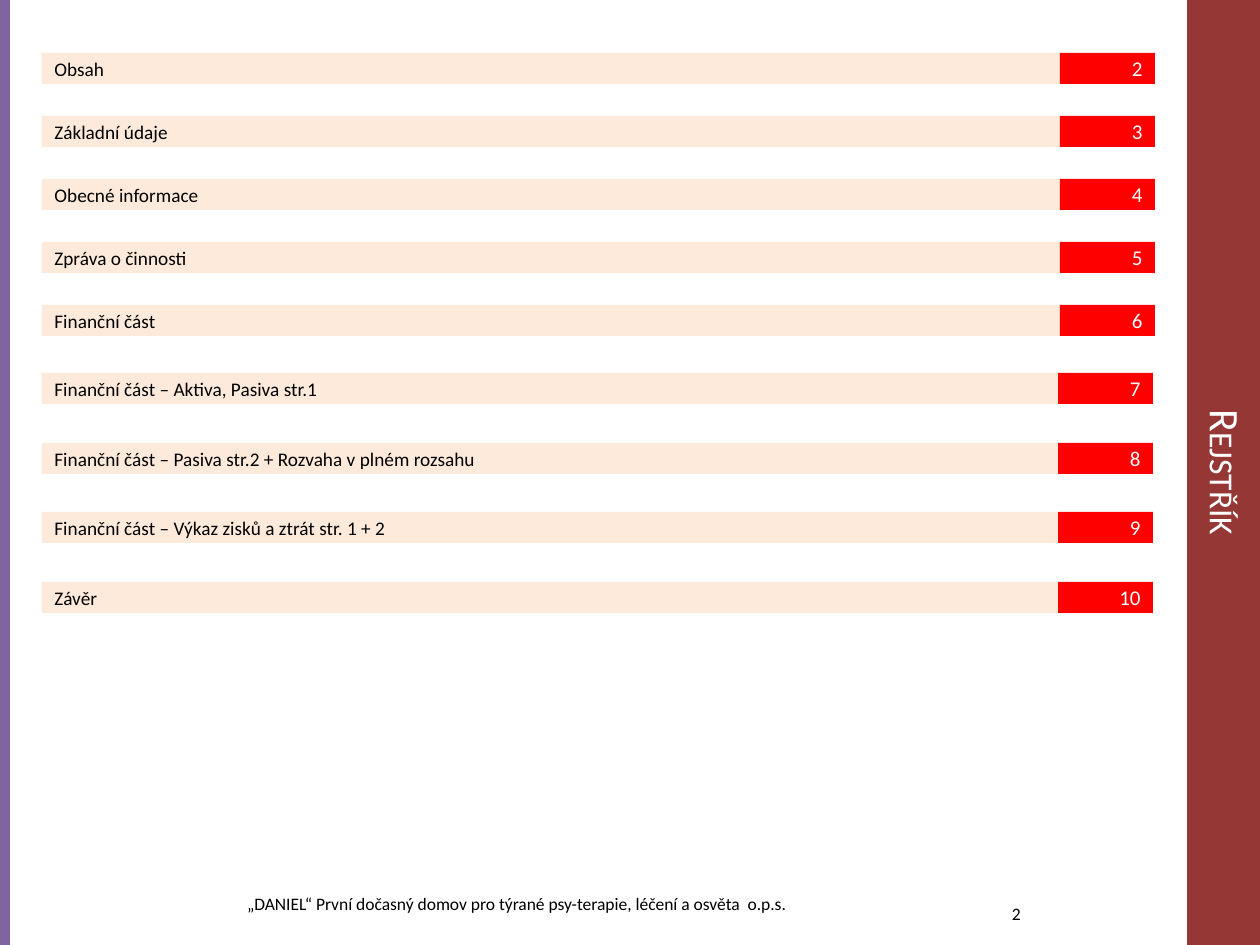
from dataclasses import dataclass

from pptx import Presentation
from pptx.dml.color import RGBColor
from pptx.enum import shapes, text
from pptx.util import Emu, Pt

PX = 914400 / 126


@dataclass(frozen=True)
class Theme:
    font: str = "Calibri"
    purple: str = "8064A2"
    maroon: str = "953735"
    peach: str = "FDEADA"
    red: str = "FF0000"
    white: str = "FFFFFF"
    black: str = "000000"
    title_size: int = 24
    page_size: int = 12
    label_size: int = 11
    footer_size: int = 10


THEME = Theme()
LEFT, CENTER, RIGHT = text.PP_ALIGN.LEFT, text.PP_ALIGN.CENTER, text.PP_ALIGN.RIGHT

ENTRIES = [
    ("Obsah", "2"),
    ("Základní údaje", "3"),
    ("Obecné informace", "4"),
    ("Zpráva o činnosti", "5"),
    ("Finanční část", "6"),
    ("Finanční část – Aktiva, Pasiva str.1", "7"),
    ("Finanční část – Pasiva str.2 + Rozvaha v plném rozsahu", "8"),
    ("Finanční část – Výkaz zisků a ztrát str. 1 + 2", "9"),
    ("Závěr", "10"),
]
CHAPTERS = 5  # entries before the more widely spaced financial group
ROW_HEIGHT = 31


def px(value):
    return Emu(round(value * PX))


def write(shape, words, size, color, align):
    frame = shape.text_frame
    frame.word_wrap = True
    frame.vertical_anchor = text.MSO_ANCHOR.MIDDLE
    paragraph = frame.paragraphs[0]
    paragraph.alignment = align
    run = paragraph.add_run()
    run.text = words
    run.font.name = THEME.font
    run.font.size = Pt(size)
    run.font.color.rgb = RGBColor.from_string(color)
    return paragraph


def paint(shape, color):
    shape.fill.solid()
    shape.fill.fore_color.rgb = RGBColor.from_string(color)
    shape.line.fill.background()


def add_bar(slide, box, color):
    shape = slide.shapes.add_shape(shapes.MSO_SHAPE.RECTANGLE, *map(px, box))
    shape.shadow.inherit = False
    paint(shape, color)
    return shape


def set_side_title(slide, words, box):
    left, top, width, height = box
    title = slide.shapes.title
    # Lay the band flat around its own centre, then turn it upright
    title.left, title.top = px(left + (width - height) / 2), px(top + (height - width) / 2)
    title.width, title.height = px(height), px(width)
    title.rotation = 90
    paint(title, THEME.maroon)
    paragraph = write(title, words, THEME.title_size, THEME.white, CENTER)
    paragraph.line_spacing = 0.9
    title.text_frame.auto_size = text.MSO_AUTO_SIZE.NONE
    paragraph.runs[0].font._element.set("cap", "small")


def add_entry(slide, index, label, page):
    if index < CHAPTERS:
        top, page_left = 53 + 63 * index, 1060
    else:
        top, page_left = 373 + round(69.6 * (index - CHAPTERS)), 1058
    label_bar = add_bar(slide, (42, top, 1018, ROW_HEIGHT), THEME.peach)
    write(label_bar, label, THEME.label_size, THEME.black, LEFT)
    page_bar = add_bar(slide, (page_left, top, 95, ROW_HEIGHT), THEME.red)
    write(page_bar, page, THEME.page_size, THEME.white, RIGHT)


def add_footer(slide):
    number = slide.shapes.add_textbox(*map(px, (892, 892, 141, 42)))
    write(number, "2", THEME.footer_size, THEME.black, RIGHT)
    owner = add_bar(slide, (74, 879, 885, 49), THEME.white)
    write(owner,
          "„DANIEL“ První dočasný domov pro týrané psy-terapie, léčení a osvěta  o.p.s.",
          THEME.footer_size, THEME.black, CENTER)


def main():
    presentation = Presentation()
    presentation.slide_width, presentation.slide_height = px(1260), px(945)
    slide = presentation.slides.add_slide(presentation.slide_layouts[5])

    # Side bands
    add_bar(slide, (0, 0, 10, 945), THEME.purple)
    set_side_title(slide, "Rejstřík", (1187, 0, 73, 945))

    # Contents list
    for index, (label, page) in enumerate(ENTRIES):
        add_entry(slide, index, label, page)

    add_footer(slide)
    presentation.save("out.pptx")


if __name__ == "__main__":
    main()
